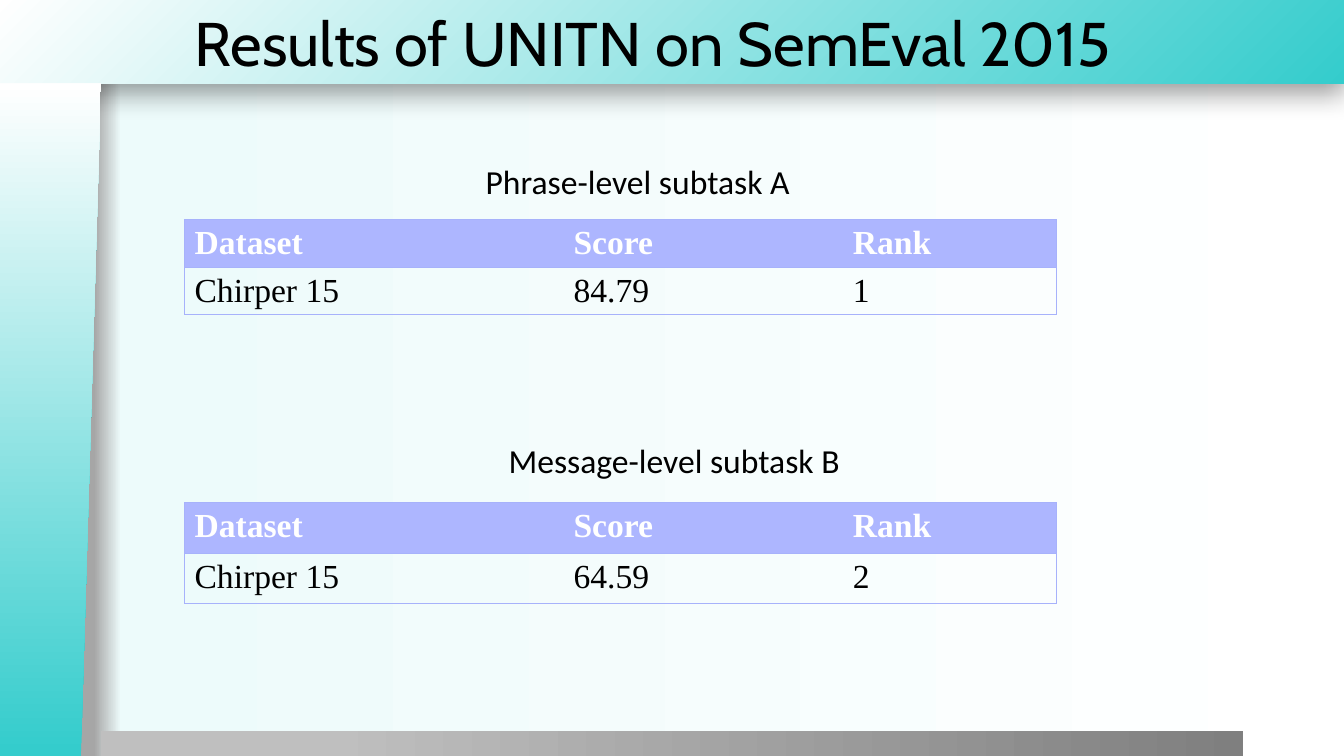
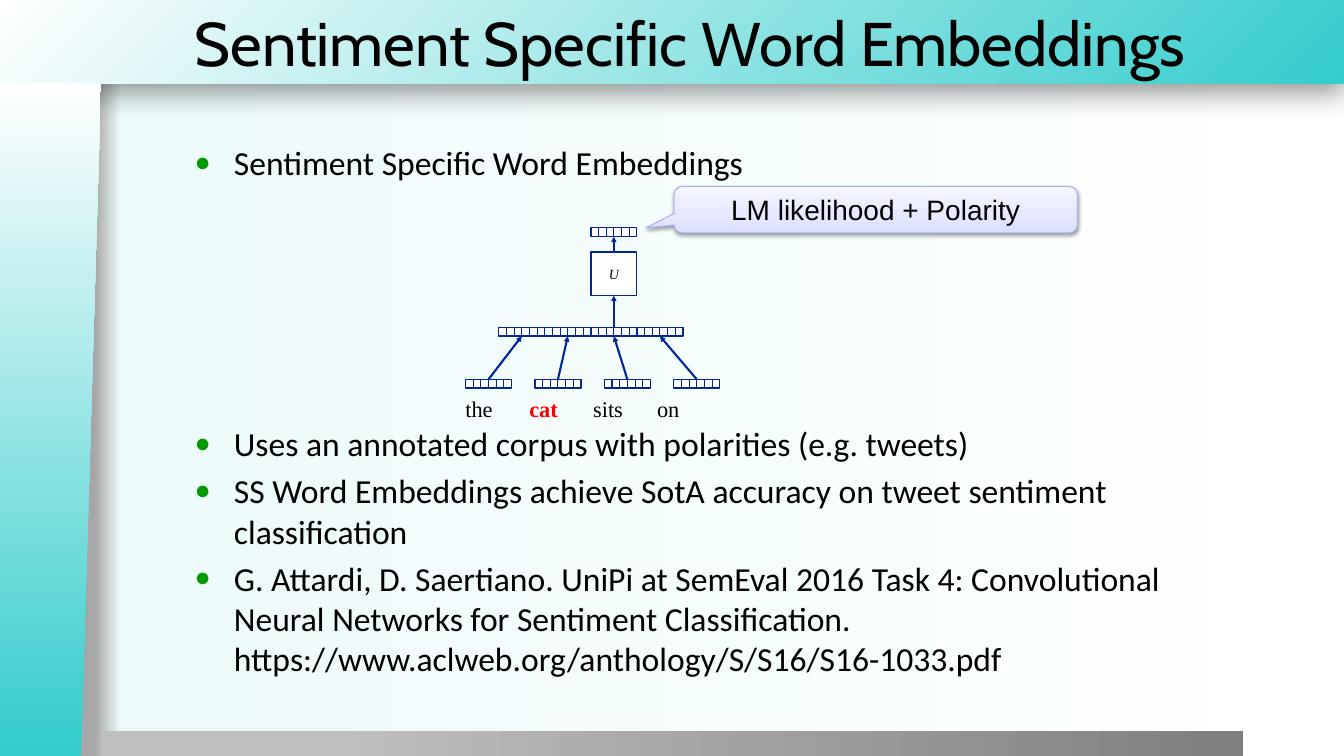
from pptx import Presentation
from pptx.dml.color import RGBColor as Rgb
from pptx.enum.shapes import MSO_CONNECTOR as Wire, MSO_SHAPE as Form
from pptx.enum.text import MSO_ANCHOR as Anchor, MSO_AUTO_SIZE as Fit, PP_ALIGN as Align
from pptx.oxml import parse_xml as to_xml
from pptx.oxml.ns import nsdecls, qn
from pptx.util import Cm, Pt

WIDE, HIGH = 33.87, 19.05
TEAL, WHITE, BLACK = "34CCCC", "FFFFFF", "000000"
NAVY, LILAC, HEAD = "002699", "A7B2FB", "ADB6FF"
GREEN, RED = "009900", "FF0000"
SERIF = "Times New Roman"
CELL_W, CELL_H = 1.16, 0.22


def color(text):
    return Rgb.from_string(text)


def box(*sides):
    return [Cm(side) for side in sides]


def node(text):
    start = text.split(">", 1)[0].rstrip("/")
    return to_xml(text.replace(start, f"{start} {nsdecls('a')}", 1))


def shade(prop, stops, way):
    marks = "".join(
        f'<a:gs pos="{pos * 1000}"><a:srgbClr val="{tint}"/></a:gs>' for pos, tint in stops
    )
    old = prop.find(qn("a:gradFill"))
    new = node(f'<a:gradFill rotWithShape="1"><a:gsLst>{marks}</a:gsLst>{way}</a:gradFill>')
    prop.replace(old, new)


def slant(angle):
    return f'<a:lin ang="{angle * 60000}" scaled="0"/>'


def glow(shape, alpha, blur, dist):
    shape.element.spPr.find(qn("a:effectLst")).append(node(
        f'<a:outerShdw blurRad="{Pt(blur)}" dist="{Pt(dist)}" dir="5400000" rotWithShape="0">'
        f'<a:srgbClr val="{BLACK}"><a:alpha val="{alpha * 1000}"/></a:srgbClr></a:outerShdw>'
    ))


def style(par, size, font, tint=BLACK, bold=False, slope=False):
    for run in par.runs:
        run.font.size = Pt(size)
        run.font.name = font
        run.font.color.rgb = color(tint)
        run.font.bold = bold
        run.font.italic = slope


def block(shapes, form, area, line=None, width=1):
    shape = shapes.add_shape(form, *box(*area))
    shape.shadow.inherit = False
    shape.fill.solid()
    shape.fill.fore_color.rgb = color(WHITE)
    if line:
        shape.line.color.rgb = color(line)
        shape.line.width = Pt(width)
    else:
        shape.line.fill.background()
    return shape


def blend(shapes, form, area, stops, way, line=None, width=1):
    shape = block(shapes, form, area, line, width)
    shape.fill.gradient()
    shade(shape.element.spPr, stops, way)
    return shape


def label(slide, area, text, size, font, tint=BLACK, bold=False, pad=None):
    note = slide.shapes.add_textbox(*box(*area))
    frame = note.text_frame
    frame.word_wrap = False
    if pad is not None:
        frame.margin_left = frame.margin_right = Cm(pad)
        frame.margin_top = frame.margin_bottom = Cm(pad)
    frame.text = text
    style(frame.paragraphs[0], size, font, tint, bold)


def wire(shapes, start, end, width, arrow=False):
    line = shapes.add_connector(Wire.STRAIGHT, *box(*start, *end))
    line.line.color.rgb = color(NAVY)
    line.line.width = Pt(width)
    prop = line.element.spPr
    if arrow:
        prop.find(qn("a:ln")).append(node('<a:tailEnd type="triangle" w="sm" len="sm"/>'))
    prop.append(node("<a:effectLst/>"))


def dress(master, slide):
    master.background.fill.gradient()
    shade(master.element.find(".//" + qn("p:bgPr")),
          [(7, "A6A6A6"), (9, "EDFBFB"), (100, WHITE)], slant(0))
    shapes = slide.shapes
    top = blend(shapes, Form.RECTANGLE, (0, 0, WIDE, 2.11), [(0, TEAL), (100, WHITE)],
                '<a:path path="circle"><a:fillToRect l="100000" t="100000"/></a:path>')
    glow(top, 40, 20, 6)
    base = blend(shapes, Form.RECTANGLE, (2.54, 18.42, 28.78, 0.65),
                 [(20, "BFBFBF"), (100, "7F7F7F")], slant(0))
    side = blend(shapes, Form.FLOWCHART_MANUAL_INPUT, (-7.21, 9.32, 16.97, 2.54),
                 [(1, TEAL), (100, WHITE)], slant(0))
    side.rotation = 270
    side.element.spPr.find(qn("a:xfrm")).set("flipV", "1")
    for spot, band in enumerate((top, base, side)):
        band.element.nvSpPr.cNvPr.set("id", str(20 + spot))
        master.shapes.element.insert(2 + spot, band.element)

    areas = (4.65, 0, 29.22, 2.11), (4.65, 3.45, 26.67, 14.71)
    for shape, area in zip(master.placeholders, areas):
        shape.left, shape.top, shape.width, shape.height = box(*area)
    master.element.find(f".//{qn('p:titleStyle')}/{qn('a:lvl1pPr')}").set("algn", "l")
    level = master.element.find(f".//{qn('p:bodyStyle')}/{qn('a:lvl1pPr')}")
    level.set("marL", str(Cm(0.99)))
    level.set("indent", str(Cm(-0.99)))
    level.find(qn("a:buChar")).set("char", "●")
    level.find(qn("a:defRPr")).set("sz", "2400")
    font = level.find(qn("a:buFont"))
    font.addprevious(node(f'<a:buClr><a:srgbClr val="{GREEN}"/></a:buClr>'))
    font.addprevious(node('<a:buSzPct val="80000"/>'))


def title(slide, text):
    frame = slide.shapes.title.text_frame
    frame.text = text
    frame.auto_size = Fit.NONE
    frame.vertical_anchor = Anchor.MIDDLE
    style(frame.paragraphs[0], 44, "Cabin")


def edge(prop, sides):
    for side in "LRTB":
        fill = f'<a:solidFill><a:srgbClr val="{LILAC}"/></a:solidFill>'
        paint = fill if side in sides else "<a:noFill/>"
        prop.append(node(f'<a:ln{side} w="{Pt(0.75)}">{paint}</a:ln{side}>'))


def grid(slide, left, top, rows):
    widths, high = (9.55, 7.04, 5.38), 1.04
    area = box(left, top, sum(widths), high * len(rows))
    holder = slide.shapes.add_table(len(rows), len(widths), *area)
    table = holder.table
    table.horz_banding = False
    for col, width in zip(table.columns, widths):
        col.width = Cm(width)
    nodes = holder.element.iter(qn("a:tc"))
    for r, row in enumerate(rows):
        table.rows[r].height = Cm(high)
        first = r == 0
        for c, text in enumerate(row):
            cell = table.cell(r, c)
            cell.text = text
            style(cell.text_frame.paragraphs[0], 24, SERIF, WHITE if first else BLACK, first)
            ends = ("L" if c == 0 else "") + ("R" if c == len(row) - 1 else "")
            edge(next(nodes).get_or_add_tcPr(), "TB" + ends)
            if first:
                cell.fill.solid()
                cell.fill.fore_color.rgb = color(HEAD)
            else:
                cell.fill.background()


def scores(slide):
    title(slide, "Results of UNITN on SemEval 2015")
    tasks = (
        ("Phrase-level subtask A", 11.99, 3.94, 8.6, 5.54, "84.79", "1"),
        ("Message-level subtask B", 12.57, 10.95, 9.4, 12.67, "64.59", "2"),
    )
    for name, left, top, width, below, score, rank in tasks:
        grid(slide, 4.65, below, [("Dataset", "Score", "Rank"), ("Chirper 15", score, rank)])
        label(slide, (left, top, width, 1.27), name, 24, "Calibri")


def strip(slide, left, top):
    shapes = slide.shapes.add_group_shape().shapes
    block(shapes, Form.RECTANGLE, (left, top, CELL_W, CELL_H), NAVY)
    for tick in range(1, 6):
        x = left + tick * CELL_W / 6
        wire(shapes, (x, top), (x, top + CELL_H), 0.75)


def network(slide, left, top):
    half = CELL_W / 2
    row, mid, low = left + 0.84, top + 2.51, top + 3.82
    peak = row + 2 * CELL_W
    hub = peak + half
    strip(slide, peak, top)
    unit = block(slide.shapes, Form.RECTANGLE, (peak, top + 0.61, CELL_W, 1.1), NAVY)
    frame = unit.text_frame
    frame.text = "U"
    frame.vertical_anchor = Anchor.MIDDLE
    frame.paragraphs[0].alignment = Align.CENTER
    style(frame.paragraphs[0], 10, SERIF, slope=True)
    for n, word in enumerate(("the", "cat", "sits", "on")):
        x, goal = left + 1.75 * n, row + CELL_W * n
        strip(slide, goal, mid)
        strip(slide, x, low)
        wire(slide.shapes, (x + half, low), (goal + half, mid + CELL_H), 1.5, True)
        hot = word == "cat"
        label(slide, (left + 1.61 * n, top + 4.22, 1.5, 0.69), word, 16, SERIF,
              RED if hot else BLACK, hot, 0)
    wire(slide.shapes, (hub, mid), (hub, top + 1.71), 1.5, True)
    wire(slide.shapes, (hub, top + 0.61), (hub, top + CELL_H), 1.5, True)


def callout(slide, area, text):
    shape = blend(slide.shapes, Form.ROUNDED_RECTANGULAR_CALLOUT, area,
                  [(0, "DBDFFF"), (35, "E5E8FF"), (100, "F5F6FF")], slant(270), LILAC, 0.75)
    for n, value in enumerate((-0.57, 0.39, 0.17)):
        shape.adjustments[n] = value
    glow(shape, 38, 3.1, 1.6)
    frame = shape.text_frame
    frame.text = text
    frame.vertical_anchor = Anchor.MIDDLE
    frame.paragraphs[0].alignment = Align.CENTER
    style(frame.paragraphs[0], 20, "Arial")


def points(slide, items, gap):
    frame = slide.placeholders[1].text_frame
    frame.auto_size = Fit.NONE
    for n, item in enumerate(items):
        par = frame.add_paragraph() if n else frame.paragraphs[0]
        par.text = item
        style(par, 24, "Calibri")
    frame.paragraphs[1].space_before = Pt(gap)


def method(slide):
    title(slide, "Sentiment Specific Word Embeddings")
    points(slide, (
        "Sentiment Specific Word Embeddings",
        "Uses an annotated corpus with polarities (e.g. tweets)",
        "SS Word Embeddings achieve SotA accuracy on tweet sentiment classification",
        "G. Attardi, D. Saertiano. UniPi at SemEval 2016 Task 4: Convolutional Neural "
        "Networks for Sentiment Classification.\n"
        "https://www.aclweb.org/anthology/S/S16/S16-1033.pdf",
    ), 172)
    network(slide, 11.73, 5.74)
    callout(slide, (16.99, 4.7, 10.16, 1.17), "LM likelihood + Polarity")


def main():
    deck = Presentation()
    deck.slide_width, deck.slide_height = box(WIDE, HIGH)
    first = deck.slides.add_slide(deck.slide_layouts[5])
    dress(deck.slide_master, first)
    scores(first)
    method(deck.slides.add_slide(deck.slide_layouts[1]))
    deck.save("out.pptx")


if __name__ == "__main__":
    main()
